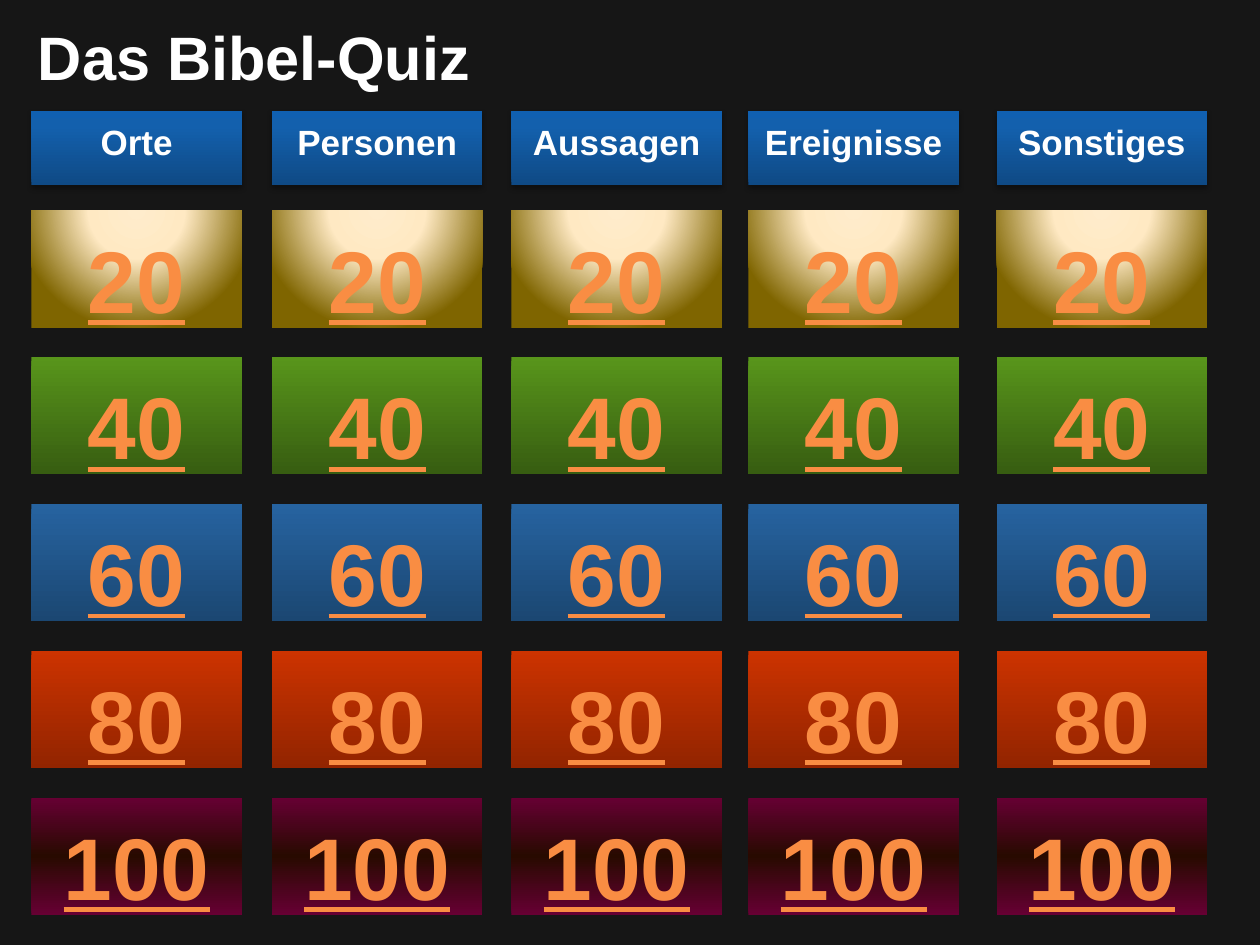
import pptx
import pptx.dml.color
import pptx.enum.shapes
import pptx.enum.text
import pptx.oxml
import pptx.oxml.ns
import pptx.util

Inches = pptx.util.Inches
Pt = pptx.util.Pt
RGBColor = pptx.dml.color.RGBColor
ALIGN = pptx.enum.text.PP_ALIGN

BACKGROUND = RGBColor(0x16, 0x16, 0x16)
WHITE = RGBColor(0xFF, 0xFF, 0xFF)
ORANGE = RGBColor(0xF9, 0x8D, 0x43)
CREAM = RGBColor(0xFF, 0xEC, 0xCC)
LIGHT_SAND = RGBColor(0xFF, 0xE9, 0xC3)
OLIVE = RGBColor(0x7F, 0x65, 0x00)
GREEN = RGBColor(0x58, 0x95, 0x1B)
DARK_GREEN = RGBColor(0x37, 0x5D, 0x11)
STEEL_BLUE = RGBColor(0x26, 0x63, 0xA0)
DARK_STEEL = RGBColor(0x1B, 0x47, 0x72)
RED = RGBColor(0xCC, 0x33, 0x00)
DARK_RED = RGBColor(0x92, 0x24, 0x00)
PLUM = RGBColor(0x66, 0x00, 0x33)
DARK_BROWN = RGBColor(0x28, 0x0A, 0x00)
NAVY = RGBColor(0x0F, 0x4A, 0x85)
ROYAL_BLUE = RGBColor(0x13, 0x60, 0xAD)
BRIGHT_BLUE = RGBColor(0x10, 0x60, 0xB1)

DOWN = '<a:lin ang="5400000" scaled="0"/>'
UP = '<a:lin ang="16200000" scaled="0"/>'
SPOTLIGHT = ('<a:path path="circle"><a:fillToRect l="50000" t="-80000" '
             'r="50000" b="180000"/></a:path>')

CATEGORIES = {"Orte": 0.25, "Personen": 2.16, "Aussagen": 4.06,
              "Ereignisse": 5.94, "Sonstiges": 7.91}
HEADER_STOPS = [(0, NAVY), (80, ROYAL_BLUE), (100, BRIGHT_BLUE)]
POINT_ROWS = [
    ("20", [(0, CREAM), (40, LIGHT_SAND), (100, OLIVE)], SPOTLIGHT),
    ("40", [(0, GREEN), (100, DARK_GREEN)], DOWN),
    ("60", [(0, STEEL_BLUE), (100, DARK_STEEL)], DOWN),
    ("80", [(0, RED), (100, DARK_RED)], DOWN),
    ("100", [(0, PLUM), (50, DARK_BROWN), (100, PLUM)], DOWN),
]
TILE_WIDTH = 1.67
HEADER_TOP, HEADER_HEIGHT = 0.88, 0.59
POINTS_TOP, POINTS_HEIGHT, ROW_STEP = 1.67, 0.93, 1.165

BASE_FONT = {"name": "Arial", "bold": True}
TITLE_FONT = {**BASE_FONT, "size": Pt(35)}
HEADER_FONT = {**BASE_FONT, "size": Pt(20)}
POINTS_FONT = {**BASE_FONT, "size": Pt(50), "underline": True}


def set_text(shape, text, font_format, color, align, top_margin):
    frame = shape.text_frame
    frame.text = text
    frame_format = {
        "word_wrap": True,
        "auto_size": pptx.enum.text.MSO_AUTO_SIZE.NONE,
        "vertical_anchor": pptx.enum.text.MSO_ANCHOR.TOP,
        "margin_top": Inches(top_margin),
        "margin_bottom": 0,
    }
    for name, value in frame_format.items():
        setattr(frame, name, value)
    paragraph = frame.paragraphs[0]
    paragraph.alignment = align
    font = paragraph.runs[0].font
    for name, value in font_format.items():
        setattr(font, name, value)
    font.color.rgb = color


def set_gradient(shape, stops, direction):
    """Fill with (percent, colour) stops along a direction element."""
    shape.fill.gradient()
    properties = shape._element.spPr
    stop_xml = "".join(
        f'<a:gs pos="{percent * 1000}"><a:srgbClr val="{color}"/></a:gs>'
        for percent, color in stops)
    gradient = pptx.oxml.parse_xml(
        f'<a:gradFill {pptx.oxml.ns.nsdecls("a")} rotWithShape="1">'
        f'<a:gsLst>{stop_xml}</a:gsLst>{direction}</a:gradFill>')
    properties.replace(properties.find(pptx.oxml.ns.qn("a:gradFill")), gradient)


def add_tile(slide, left, top, height, stops, direction):
    tile = slide.shapes.add_shape(
        pptx.enum.shapes.MSO_SHAPE.RECTANGLE,
        Inches(left), Inches(top), Inches(TILE_WIDTH), Inches(height))
    set_gradient(tile, stops, direction)
    tile.line.fill.background()
    tile.shadow.inherit = False
    return tile


def add_drop_shadow(shape):
    effects = shape._element.spPr.find(pptx.oxml.ns.qn("a:effectLst"))
    effects.append(pptx.oxml.parse_xml(
        f'<a:outerShdw {pptx.oxml.ns.nsdecls("a")} blurRad="{Pt(3.1)}" '
        f'dist="{Pt(1.8)}" dir="5400000" rotWithShape="0">'
        '<a:srgbClr val="000000"><a:alpha val="35000"/></a:srgbClr>'
        '</a:outerShdw>'))


def add_header(slide, category, left):
    header = add_tile(slide, left, HEADER_TOP, HEADER_HEIGHT, HEADER_STOPS, UP)
    add_drop_shadow(header)
    set_text(header, category, HEADER_FONT, WHITE, ALIGN.CENTER, 0.08)


def add_points_row(slide, row, points, stops, direction):
    top = POINTS_TOP + row * ROW_STEP
    for left in CATEGORIES.values():
        tile = add_tile(slide, left, top, POINTS_HEIGHT, stops, direction)
        set_text(tile, points, POINTS_FONT, ORANGE, ALIGN.CENTER, 0.12)


def set_title(slide, text):
    title = slide.shapes.title
    title.left, title.top = Inches(0.2), Inches(0.05)
    title.width, title.height = Inches(6.3), Inches(0.69)
    set_text(title, text, TITLE_FONT, WHITE, ALIGN.LEFT, 0.1)


def main():
    presentation = pptx.Presentation()
    presentation.slide_width = Inches(10)
    presentation.slide_height = Inches(7.5)
    slide = presentation.slides.add_slide(presentation.slide_layouts[5])
    slide.background.fill.solid()
    slide.background.fill.fore_color.rgb = BACKGROUND
    set_title(slide, "Das Bibel-Quiz")
    for category, left in CATEGORIES.items():
        add_header(slide, category, left)
    for row, (points, stops, direction) in enumerate(POINT_ROWS):
        add_points_row(slide, row, points, stops, direction)
    presentation.save("out.pptx")


if __name__ == "__main__":
    main()
